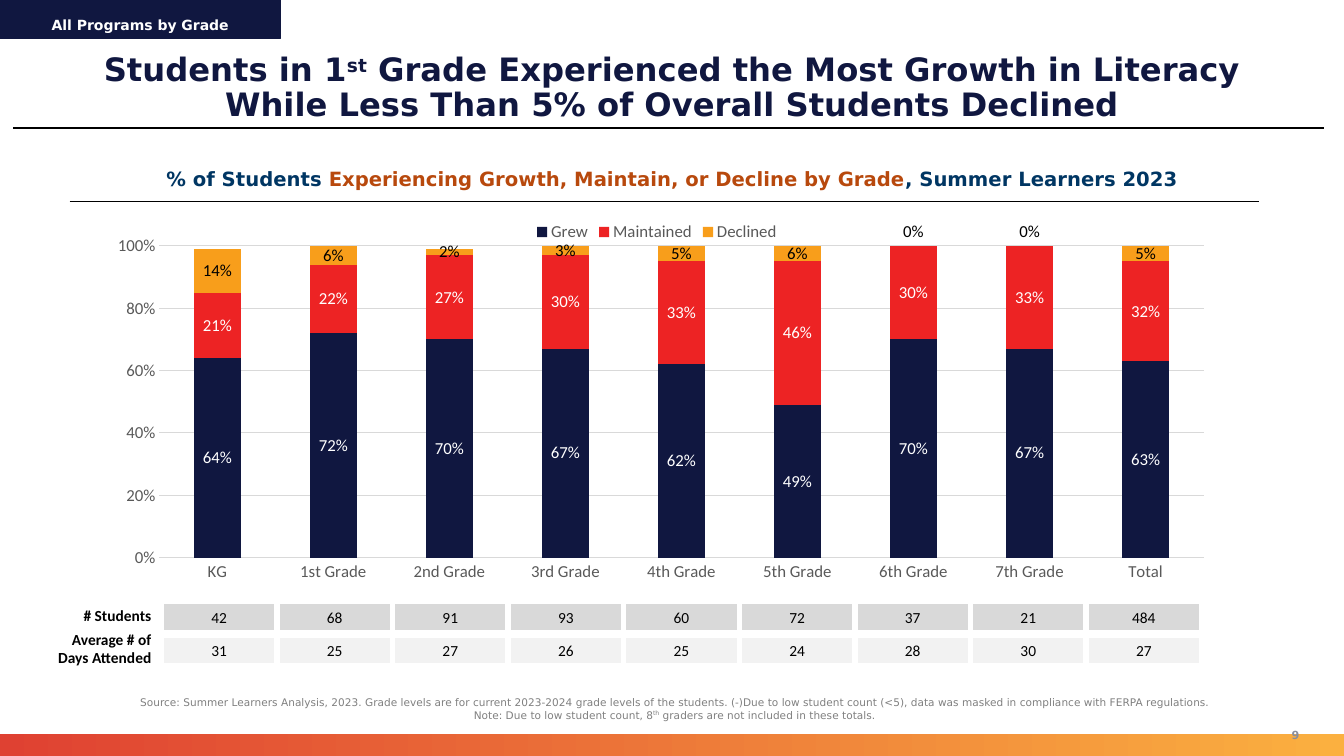
import pptx
import pptx.chart.data
import pptx.dml.color
import pptx.enum.chart
import pptx.enum.shapes
import pptx.enum.text
import pptx.oxml
import pptx.oxml.ns
import pptx.util
from pptx.util import Inches, Pt

COLORS = {
    "navy": "101740", "red": "ED2324", "amber": "F89E1B", "black": "000000",
    "white": "FFFFFF", "blue": "003663", "rust": "B8490D", "axis": "595959",
    "grid": "D9D9D9", "pale": "F2F2F2", "note": "808080", "page": "888E9D",
    "band_start": "DF4132", "band_end": "FBB040",
}
HEADING, BODY = "DejaVu Sans", "Calibri"
ALIGN = pptx.enum.text.PP_ALIGN
ANCHOR = pptx.enum.text.MSO_ANCHOR
RECTANGLE = pptx.enum.shapes.MSO_SHAPE.RECTANGLE

GRADES = ["KG", "1st Grade", "2nd Grade", "3rd Grade", "4th Grade",
          "5th Grade", "6th Grade", "7th Grade", "Total"]
SERIES = [
    ("Grew", [.64, .72, .70, .67, .62, .49, .70, .67, .63], "navy", "white"),
    ("Maintained", [.21, .22, .27, .30, .33, .46, .30, .33, .32], "red", "white"),
    ("Declined", [.14, .06, .02, .03, .05, .06, 0, 0, .05], "amber", "black"),
]
STUDENTS = [42, 68, 91, 93, 60, 72, 37, 21, 484]
DAYS = [31, 25, 27, 26, 25, 24, 28, 30, 27]


def rgb(name):
    return pptx.dml.color.RGBColor.from_string(COLORS[name])


def style_font(font, size, color, name=BODY, bold=False):
    font.size, font.name, font.bold = Pt(size), name, bold
    font.color.rgb = rgb(color)


def fill_text(shape, paragraphs, size, color, name=HEADING, bold=True, align=ALIGN.CENTER,
              anchor=ANCHOR.MIDDLE, insets=(.1, .05, .1, .05), spacing=None):
    """Each paragraph is a list of (text, color or None, superscript) runs."""
    frame = shape.text_frame
    frame.word_wrap, frame.vertical_anchor = True, anchor
    frame.margin_left, frame.margin_top, frame.margin_right, frame.margin_bottom = map(Inches, insets)
    for index, runs in enumerate(paragraphs):
        paragraph = frame.add_paragraph() if index else frame.paragraphs[0]
        paragraph.alignment, paragraph.line_spacing = align, spacing
        style_font(paragraph.font, size, color, name, bold)
        for text, run_color, superscript in runs:
            run = paragraph.add_run()
            run.text = text
            if run_color:
                run.font.color.rgb = rgb(run_color)
            if superscript:
                run.font._element.set("baseline", "30000")


def add_text(slide, box, paragraphs, size, color, **options):
    fill_text(slide.shapes.add_textbox(*map(Inches, box)), paragraphs, size, color, **options)


def add_rule(slide, left, right, y):
    line = slide.shapes.add_connector(pptx.enum.shapes.MSO_CONNECTOR.STRAIGHT,
                                      Inches(left), Inches(y), Inches(right), Inches(y))
    line.line.color.rgb = rgb("black")
    line.line.width = Pt(1)
    line._element.spPr.append(pptx.oxml.parse_xml(
        f'<a:effectLst {pptx.oxml.ns.nsdecls("a")}/>'))


def add_header(slide, box):
    left, top, width, height = box
    tab = slide.shapes.add_shape(RECTANGLE, 0, 0, Inches(2.78), Inches(.38))
    tab.shadow.inherit = False
    tab.fill.solid()
    tab.fill.fore_color.rgb = tab.line.color.rgb = rgb("navy")
    tab.line.width = Pt(.75)
    fill_text(tab, [[("All Programs by Grade", None, False)]], 10, "white",
              insets=(.1, .14, .1, 0), spacing=.9)
    add_text(slide, (left + .67, top + .38, width - 1.33, 1),
             [[("Students in 1", None, False), ("st", None, True),
               (" Grade Experienced the Most Growth in Literacy "
                "While Less Than 5% of Overall Students Declined", None, False)]],
             23, "navy", insets=(.05, .1, .05, .1), spacing=.9)
    add_rule(slide, left + .13, left + width - .2, top + height)


def add_chart_heading(slide, box):
    left, top, width, height = box
    add_text(slide, (left + .04, top, width + .07, .51),
             [[("% of Students ", None, False),
               ("Experiencing Growth, Maintain, or Decline by Grade", "rust", False),
               (", Summer Learners 2023", None, False)]],
             14, "blue", anchor=ANCHOR.BOTTOM, insets=(0, .05, 0, .05))
    add_rule(slide, left, left + width, top + height)


def add_growth_chart(slide, box):
    data = pptx.chart.data.CategoryChartData(number_format="0%")
    data.categories = GRADES
    for name, values, _, _ in SERIES:
        data.add_series(name, values)
    chart = slide.shapes.add_chart(pptx.enum.chart.XL_CHART_TYPE.COLUMN_STACKED,
                                   *map(Inches, box), data).chart
    style_font(chart.font, 10, "black")
    chart.has_title = False
    chart.has_legend = True
    chart.legend.position = pptx.enum.chart.XL_LEGEND_POSITION.TOP
    chart.legend.include_in_layout = False
    style_font(chart.legend.font, 12, "axis")

    category_axis, value_axis = chart.category_axis, chart.value_axis
    for axis in (category_axis, value_axis):
        axis.major_tick_mark = axis.minor_tick_mark = pptx.enum.chart.XL_TICK_MARK.NONE
        style_font(axis.tick_labels.font, 12, "axis")
    value_axis.minimum_scale, value_axis.maximum_scale, value_axis.major_unit = 0, 1, .2
    value_axis.tick_labels.number_format = "0%"
    value_axis.tick_labels.number_format_is_linked = False
    value_axis.format.line.fill.background()
    for line in (category_axis.format.line, value_axis.major_gridlines.format.line):
        line.color.rgb = rgb("grid")
        line.width = Pt(.75)

    plot = chart.plots[0]
    plot.gap_width, plot.overlap, plot.vary_by_categories = 150, 100, False
    for series, (_, values, color, label_color) in zip(plot.series, SERIES):
        series.format.fill.solid()
        series.format.fill.fore_color.rgb = rgb(color)
        labels = series.data_labels
        labels.show_value = True
        labels.number_format, labels.number_format_is_linked = "0%", False
        style_font(labels.font, 12, label_color)
        for index, value in enumerate(values):
            if value == 0:
                label = series.points[index].data_label
                style_font(label.font, 12, label_color)
                label.position = pptx.enum.chart.XL_LABEL_POSITION.INSIDE_BASE

    sizes = "".join(f'<c:{tag} val="{value}"/>' for tag, value in
                    (("x", .055), ("y", .09), ("w", .934), ("h", .795)))
    layout = pptx.oxml.parse_xml(
        f'<c:layout {pptx.oxml.ns.nsdecls("c")}><c:manualLayout><c:layoutTarget val="inner"/>'
        f'<c:xMode val="edge"/><c:yMode val="edge"/>{sizes}</c:manualLayout></c:layout>')
    plot_area = chart._chartSpace.chart.plotArea
    for existing in plot_area.findall(pptx.oxml.ns.qn("c:layout")):
        plot_area.remove(existing)
    plot_area.insert(0, layout)


def add_count_row(slide, box, values, fill):
    table = slide.shapes.add_table(1, len(values), *map(Inches, box)).table
    table.first_row = table.horz_banding = False
    for cell, value in zip(table.iter_cells(), values):
        cell.text = str(value)
        cell.vertical_anchor = ANCHOR.MIDDLE
        cell.margin_left = cell.margin_right = cell.margin_top = Inches(.01)
        cell.margin_bottom = 0
        paragraph = cell.text_frame.paragraphs[0]
        paragraph.alignment = ALIGN.CENTER
        style_font(paragraph.font, 11, "black")
        properties = cell._tc.get_or_add_tcPr()
        for side, points in (("L", 4.5), ("R", 4.5), ("T", 1), ("B", 3)):
            properties.append(pptx.oxml.parse_xml(
                f'<a:ln{side} {pptx.oxml.ns.nsdecls("a")} w="{Pt(points)}"><a:solidFill>'
                f'<a:srgbClr val="{COLORS["white"]}"/></a:solidFill></a:ln{side}>'))
        cell.fill.solid()
        cell.fill.fore_color.rgb = rgb(fill)


def add_counts(slide, box):
    left, top, width, height = box
    rows = [("# Students", STUDENTS, "grid", -.03, .29),
            ("Average # of Days Attended", DAYS, "pale", -.12, .47)]
    for index, (label, values, fill, offset, label_height) in enumerate(rows):
        y = top + index * .33
        add_count_row(slide, (left, y, width, height), values, fill)
        add_text(slide, (left - 1.29, y + offset, 1.29, label_height), [[(label, None, False)]],
                 11, "black", name=BODY, align=ALIGN.RIGHT, anchor=ANCHOR.TOP)


def add_footer(slide, box):
    left, top, width, height = box
    band = slide.shapes.add_shape(RECTANGLE, *map(Inches, box))
    band.shadow.inherit = False
    band.line.fill.background()
    band.fill.gradient()
    band.fill.gradient_angle = 0
    for stop, color in zip(band.fill.gradient_stops, ("band_start", "band_end")):
        stop.color.rgb = rgb(color)
    add_text(slide, (left + 12.6, top - .14, .5, .3), [[("9", None, False)]], 8, "page")
    add_text(slide, (left + .91, top - .48, width - 1.82, .46),
             [[("Source: Summer Learners Analysis, 2023. Grade levels are for current 2023-2024 "
                "grade levels of the students. (-)Due to low student count (<5), data was masked "
                "in compliance with FERPA regulations.", None, False)],
              [("Note: Due to low student count, 8", None, False), ("th", None, True),
               (" graders are not included in these totals.", None, False)]],
             7.5, "note", bold=False, insets=(.05, 0, 0, 0))


def main():
    presentation = pptx.Presentation()
    presentation.slide_width, presentation.slide_height = Inches(13.33), Inches(7.5)
    slide = presentation.slides.add_slide(presentation.slide_layouts[6])
    add_footer(slide, (0, 7.28, 13.33, .22))
    add_header(slide, (0, 0, 13.33, 1.27))
    add_chart_heading(slide, (.69, 1.43, 11.8, .57))
    add_growth_chart(slide, (.97, 2.09, 11.09, 3.89))
    add_counts(slide, (1.6, 5.99, 10.32, .28))
    presentation.save("out.pptx")


if __name__ == "__main__":
    main()
